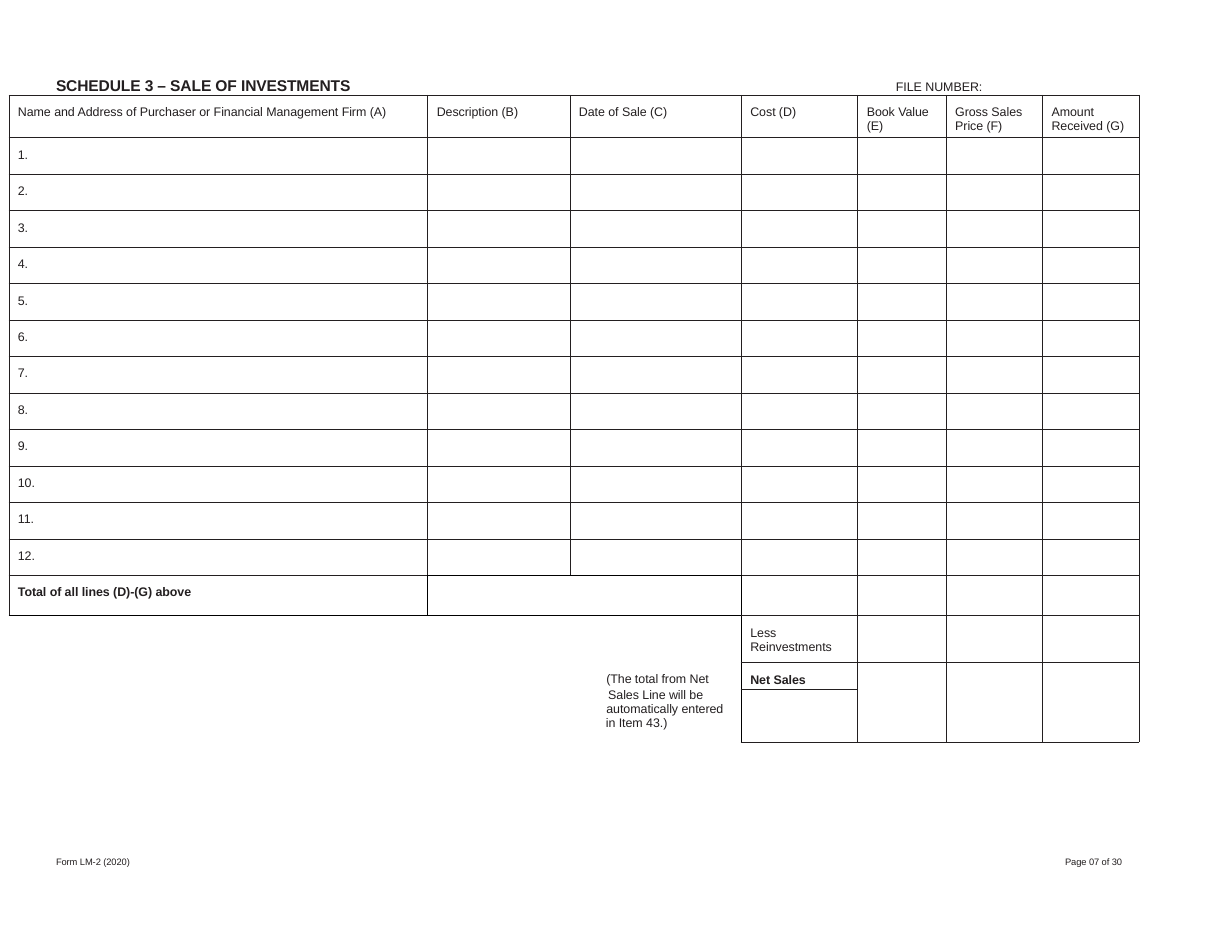
from lxml import etree
from pptx import Presentation
from pptx import util as u
from pptx.dml.color import RGBColor
from pptx.enum import text
from pptx.oxml.ns import qn

THEME = {
    "font": "Arial", "ink": "231F20", "heavy_ink": "000000",
    "title": 10, "body": 8, "footer": 6, "tracking": "-5",
    "rule": 0.5, "heavy_rule": 1,
}

TITLE = ("SCHEDULE 3 – SALE OF INVESTMENTS", (0.5, 0.67, 4.07, 0.18))
LABELS = [
    ("FILE NUMBER:", (8, 0.7, 0.9, 0.16), "body"),
    ("Form LM-2 (2020)", (0.5, 7.63, 1.81, 0.11), "footer"),
    ("Page 07 of 30", (9.51, 7.63, 0.64, 0.11), "footer"),
]
COLUMNS = [
    ("Name and Address of Purchaser or Financial Management Firm (A)", 3.74),
    ("Description (B)", 1.27),
    ("Date of Sale (C)", 1.53),
    ("Cost (D)", 1.04),
    ("Book Value (E)", 0.79),
    ("Gross Sales Price (F)", 0.86),
    ("Amount Received (G)", 0.86),
]
LINES = 12
TOTAL = "Total of all lines (D)-(G) above"
REINVESTED = "Less Reinvestments"
NET = "Net Sales"
NOTE = [("(The total from Net", 0.29, 8.8), ("Sales Line will be", 0.34, 8.2),
        ("automatically entered", 0.16, 8.2), ("in Item 43.)", 0.66, 8.9)]

TABLE_LEFT, TABLE_TOP = 0.08, 0.85
HEADER_HEIGHT, LINES_HEIGHT = 0.38, 3.91
SUMMARY_HEIGHTS = [0.36, 0.42, 0.24, 0.12, 0.12, 0.23]
CELL_INDENT, CELL_TOP = 0.08, 0.09

TOTAL_ROW = LINES + 1
LESS_ROW = TOTAL_ROW + 1
NET_ROW = LESS_ROW + 1
COST = 3
HEIGHTS = [HEADER_HEIGHT] + [LINES_HEIGHT / LINES] * LINES + SUMMARY_HEIGHTS
LAST_ROW, LAST_COL = len(HEIGHTS) - 1, len(COLUMNS) - 1

CONTENT = {(0, col): name for col, (name, _) in enumerate(COLUMNS)}
CONTENT.update({(n, 0): f"{n}." for n in range(1, LINES + 1)})
CONTENT.update({(TOTAL_ROW, 0): TOTAL, (LESS_ROW, COST): REINVESTED,
                (NET_ROW, COST): NET})
BOLD = {(TOTAL_ROW, 0), (NET_ROW, COST)}

MERGES = {(TOTAL_ROW, 1): (TOTAL_ROW, 2)}
MERGES.update({(row, 0): (row, 2) for row in range(LESS_ROW, LAST_ROW + 1)})
MERGES.update({(NET_ROW, col): (LAST_ROW, col)
               for col in range(COST + 1, LAST_COL + 1)})


def style(paragraph, words, size="body", bold=False, line=None,
          align=text.PP_ALIGN.LEFT):
    paragraph.alignment = align
    paragraph.line_spacing = u.Pt(line) if line else 1.0
    run = paragraph.add_run()
    run.text = words
    run.font.name = THEME["font"]
    run.font.size = u.Pt(THEME[size])
    run.font.bold = bold
    run.font.color.rgb = RGBColor.from_string(THEME["ink"])
    run.font._element.set("spc", THEME["tracking"])


def place_text(shape, words, **format):
    frame = shape.text_frame
    frame.word_wrap = True
    frame.auto_size = text.MSO_AUTO_SIZE.NONE
    frame.vertical_anchor = text.MSO_ANCHOR.TOP
    frame.margin_left = frame.margin_right = frame.margin_bottom = 0
    frame.margin_top = u.Inches(0.01)
    style(frame.paragraphs[0], words, **format)


def region(row, col):
    if not (0 <= row <= LAST_ROW and 0 <= col <= LAST_COL):
        return "outside"
    if row >= LESS_ROW and col < COST:
        return "note"
    if row == TOTAL_ROW and col in (1, 2):
        return "total gap"
    if row > NET_ROW and col == COST:
        return "net entry"
    return (min(row, NET_ROW), col)


def edge_weight(here, there):
    pair = {here, there}
    if len(pair) == 1 or pair == {"note", "outside"}:
        return None
    return "heavy_rule" if pair & {"note", "total gap"} else "rule"


def draw_borders(cell, row, col):
    bottom, right = MERGES.get((row, col), (row, col))
    here = region(row, col)
    neighbours = {"a:lnL": (row, col - 1), "a:lnR": (row, right + 1),
                  "a:lnT": (row - 1, col), "a:lnB": (bottom + 1, col)}
    properties = cell._tc.get_or_add_tcPr()
    for position, (side, place) in enumerate(neighbours.items()):
        weight = edge_weight(here, region(*place))
        border = etree.Element(qn(side))
        if weight:
            border.set("w", str(u.Pt(THEME[weight])))
            fill = etree.SubElement(border, qn("a:solidFill"))
            ink = "heavy_ink" if weight == "heavy_rule" else "ink"
            etree.SubElement(fill, qn("a:srgbClr"), val=THEME[ink])
        else:
            border.set("w", "0")
            etree.SubElement(border, qn("a:noFill"))
        properties.insert(position, border)


def fill_cell(cell, row, col):
    cell.margin_left = u.Inches(CELL_INDENT)
    cell.margin_top = 0 if row > NET_ROW else u.Inches(CELL_TOP)
    cell.margin_right = cell.margin_bottom = 0
    cell.vertical_anchor = text.MSO_ANCHOR.TOP
    cell.fill.background()
    paragraph = cell.text_frame.paragraphs[0]
    if row >= NET_ROW and col == 0:
        words, gap, line = NOTE[row - NET_ROW]
        cell.margin_right = u.Inches(gap)
        style(paragraph, words, line=line, align=text.PP_ALIGN.RIGHT)
    elif (row, col) in CONTENT:
        style(paragraph, CONTENT[row, col], bold=(row, col) in BOLD)
    else:
        etree.SubElement(paragraph._p, qn("a:endParaRPr"),
                         sz=str(THEME["footer"] * 100))


def add_schedule(slide):
    widths = [width for _, width in COLUMNS]
    schedule = slide.shapes.add_table(
        len(HEIGHTS), len(COLUMNS), u.Inches(TABLE_LEFT), u.Inches(TABLE_TOP),
        u.Inches(sum(widths)), u.Inches(sum(HEIGHTS))).table
    schedule.first_row = schedule.horz_banding = False
    for column, width in zip(schedule.columns, widths):
        column.width = u.Inches(width)
    for row, height in zip(schedule.rows, HEIGHTS):
        row.height = u.Inches(height)
    for start, end in MERGES.items():
        schedule.cell(*start).merge(schedule.cell(*end))
    for row in range(len(HEIGHTS)):
        for col in range(len(COLUMNS)):
            cell = schedule.cell(row, col)
            fill_cell(cell, row, col)
            draw_borders(cell, row, col)


def main():
    deck = Presentation()
    deck.slide_width, deck.slide_height = u.Inches(11), u.Inches(8.5)
    slide = deck.slides.add_slide(deck.slide_layouts[5])
    words, place = TITLE
    heading = slide.shapes.title
    (heading.left, heading.top,
     heading.width, heading.height) = map(u.Inches, place)
    place_text(heading, words, size="title", bold=True)
    for words, place, size in LABELS:
        label = slide.shapes.add_textbox(*map(u.Inches, place))
        place_text(label, words, size=size)
    add_schedule(slide)
    deck.save("out.pptx")


if __name__ == "__main__":
    main()
